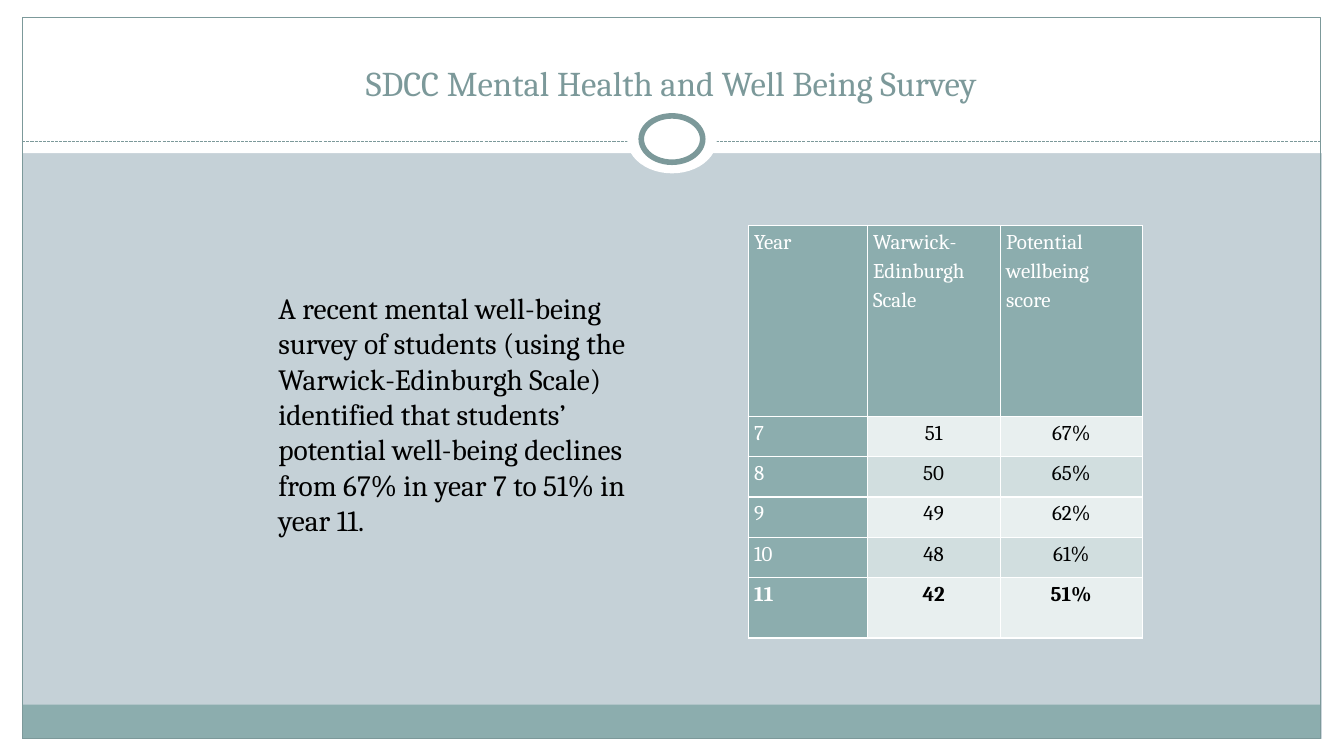
"""Build the wellbeing survey slide with its table of scores by year."""
import pptx
import pptx.util
import pptx.dml.color
import pptx.enum.dml
import pptx.enum.shapes
import pptx.enum.text
import lxml.etree

Inches = pptx.util.Inches
Pt = pptx.util.Pt
Align = pptx.enum.text.PP_ALIGN
Anchor = pptx.enum.text.MSO_ANCHOR
Kind = pptx.enum.shapes.MSO_SHAPE
Color = pptx.dml.color.RGBColor.from_string
HUES = {"back": "C5D1D7", "white": "FFFFFF", "teal": "8CADAE", "edge": "7C999A",
        "pale": "E8EFEF", "mid": "D1DEDF", "black": "000000"}


def write(frame, text, size=15, hue="black", bold=False, align=Align.LEFT,
          space=1.0, pad=(0.06, 0)):
    frame.word_wrap = True
    frame.margin_left = frame.margin_right = Inches(pad[0])
    frame.margin_top = frame.margin_bottom = Inches(pad[1])
    para = frame.paragraphs[0]
    para.alignment = align
    para.line_spacing = space
    run = para.add_run()
    run.text = text
    run.font.name = "Cambria"
    run.font.size = Pt(size)
    run.font.bold = bold
    run.font.color.rgb = Color(HUES[hue])


deck = pptx.Presentation()
deck.slide_width = Inches(13.33)
deck.slide_height = Inches(7.5)
slide = deck.slides.add_slide(deck.slide_layouts[6])
slide.background.fill.solid()
slide.background.fill.fore_color.rgb = Color(HUES["back"])
shapes = slide.shapes

rule = shapes.add_connector(pptx.enum.shapes.MSO_CONNECTOR.STRAIGHT,
                            Inches(0.22), Inches(1.4), Inches(13.1), Inches(1.4))
rule.line.color.rgb = Color(HUES["edge"])
rule.line.width = Pt(0.75)
rule.line.dash_style = pptx.enum.dml.MSO_LINE.SQUARE_DOT
props = rule.line._get_or_add_ln().getparent()
lxml.etree.SubElement(props, pptx.oxml.ns.qn("a:effectLst"))

for kind, box, fill, width in [
    (Kind.RECTANGLE, (0, 7.33, 13.33, 0.17), "white", 0),
    (Kind.RECTANGLE, (0, 0, 13.33, 1.52), "white", 0),
    (Kind.RECTANGLE, (0, 0, 0.22, 7.5), "white", 0),
    (Kind.RECTANGLE, (13.11, 0, 0.22, 7.5), "white", 0),
    (Kind.RECTANGLE, (0.22, 6.99, 12.88, 0.34), "teal", 0),
    (Kind.RECTANGLE, (0.22, 0.17, 12.88, 7.16), None, 0.75),
    (Kind.OVAL, (6.22, 1.05, 0.89, 0.67), "white", 0),
    (Kind.OVAL, (6.36, 1.15, 0.61, 0.46), "white", 4),
]:
    if kind == Kind.OVAL or width:
        shapes._spTree.append(rule._element) if kind == Kind.RECTANGLE else None
    shape = shapes.add_shape(kind, *map(Inches, box))
    shape.shadow.inherit = False
    if fill:
        shape.fill.solid()
        shape.fill.fore_color.rgb = Color(HUES[fill])
    else:
        shape.fill.background()
    if width:
        shape.line.color.rgb = Color(HUES["edge"])
        shape.line.width = Pt(width)
    else:
        shape.line.fill.background()

title = shapes.add_textbox(*map(Inches, (0.44, 0.25, 12.44, 0.83))).text_frame
title.vertical_anchor = Anchor.BOTTOM
write(title, "SDCC Mental Health and Well Being Survey", size=24.8, hue="edge",
      align=Align.CENTER, pad=(0.1, 0.05))

body = shapes.add_textbox(*map(Inches, (2.69, 2.82, 4.08, 2.57))).text_frame
body.vertical_anchor = Anchor.MIDDLE
write(body, "A recent mental well-being survey of students (using the "
      "Warwick-Edinburgh Scale) identified that students’ potential well-being "
      "declines from 67% in year 7 to 51% in year 11.", size=21, pad=(0.07, 0.04))

rows = [("Year", "Warwick-Edinburgh Scale", "Potential wellbeing score"),
        ("7", "51", "67%"), ("8", "50", "65%"), ("9", "49", "62%"),
        ("10", "48", "61%"), ("11", "42", "51%")]
table = shapes.add_table(6, 3, *map(Inches, (7.42, 2.24, 3.91, 4.11))).table
for col, width in zip(table.columns, (1.18, 1.32, 1.41)):
    col.width = Inches(width)
for row, height in zip(table.rows, (1.89, 0.4, 0.4, 0.4, 0.4, 0.6)):
    row.height = Inches(height)

for r, row in enumerate(rows):
    for c, text in enumerate(row):
        cell = table.cell(r, c)
        head = r == 0 or c == 0
        write(cell.text_frame, text, hue="white" if head else "black", bold=r == 5,
              align=Align.LEFT if head else Align.CENTER, space=1.2)
        cell.margin_left = cell.margin_right = Inches(0.06)
        cell.margin_top = cell.margin_bottom = 0
        props = cell._tc.get_or_add_tcPr()
        for side in ("lnL", "lnR", "lnT", "lnB"):
            line = lxml.etree.SubElement(props, pptx.oxml.ns.qn("a:" + side), w=str(Pt(1)))
            fill = lxml.etree.SubElement(line, pptx.oxml.ns.qn("a:solidFill"))
            lxml.etree.SubElement(fill, pptx.oxml.ns.qn("a:srgbClr"), val=HUES["white"])
        cell.fill.solid()
        cell.fill.fore_color.rgb = Color(
            HUES["teal" if head else "pale" if r % 2 else "mid"])

deck.save("out.pptx")
